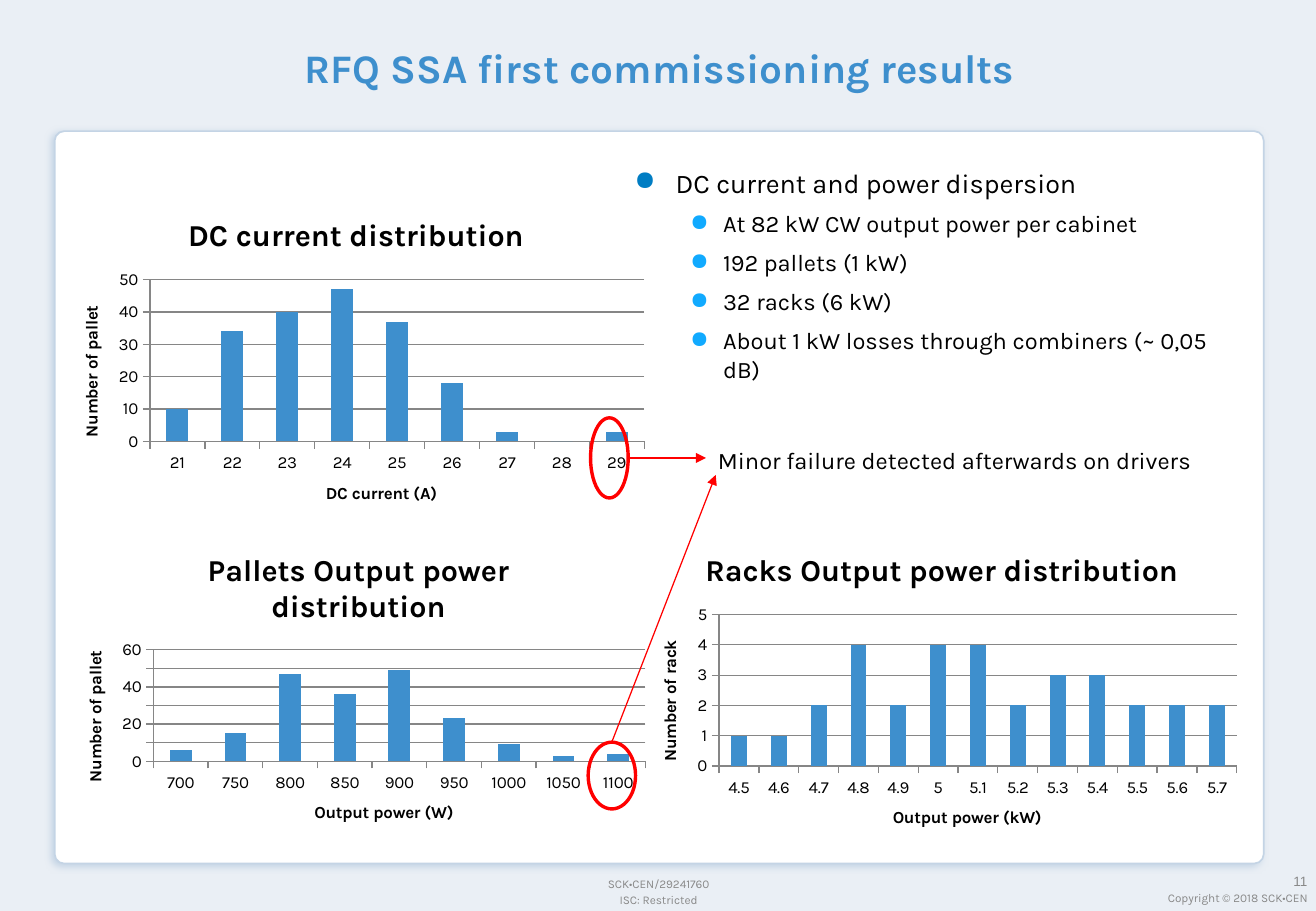
from lxml import etree
from pptx import Presentation
from pptx.chart import data as chart_data
from pptx.dml.color import RGBColor
from pptx.enum import chart as chart_enum, shapes, text
from pptx.oxml import ns
from pptx.util import Inches, Pt

BACKDROP = RGBColor(0xEA, 0xEF, 0xF5)
WHITE = RGBColor(0xFF, 0xFF, 0xFF)
BLACK = RGBColor(0x00, 0x00, 0x00)
BLUE = RGBColor(0x3E, 0x8F, 0xCD)
CARD_EDGE = RGBColor(0xC4, 0xD4, 0xE5)
GREY = RGBColor(0x89, 0x89, 0x89)
AXIS = RGBColor(0x86, 0x86, 0x86)
RED = RGBColor(0xFF, 0x00, 0x00)
TOPIC_DOT = RGBColor(0x00, 0x7D, 0xC3)
DETAIL_DOT = RGBColor(0x11, 0xAA, 0xFF)
FONT = "Karla"
LEFT, CENTER, RIGHT = text.PP_ALIGN.LEFT, text.PP_ALIGN.CENTER, text.PP_ALIGN.RIGHT


def sub(parent, tag, **attributes):
    return etree.SubElement(parent, ns.qn(tag), attributes)


def set_font(font, size, color=BLACK, bold=False, name=FONT):
    font.name, font.size, font.bold = name, Pt(size), bold
    font.color.rgb = color


def write(paragraph, words, size=14, color=BLACK, bold=False, name=FONT,
          align=LEFT, before=0, after=0):
    paragraph.alignment = align
    paragraph.space_before, paragraph.space_after = Pt(before), Pt(after)
    run = paragraph.add_run()
    run.text = words
    set_font(run.font, size, color, bold, name)


def set_frame(frame, margin_x, margin_y):
    frame.word_wrap = True
    frame.margin_left = frame.margin_right = Inches(margin_x)
    frame.margin_top = frame.margin_bottom = Inches(margin_y)
    return frame


def add_label(slide, box, words, margin_x=0.1, margin_y=0.05, **style):
    label = slide.shapes.add_textbox(*map(Inches, box))
    write(set_frame(label.text_frame, margin_x, margin_y).paragraphs[0], words, **style)
    return label


def set_bullet(paragraph, color, indent, hanging):
    properties = paragraph._p.get_or_add_pPr()
    properties.set("marL", str(Inches(indent)))
    properties.set("indent", str(-Inches(hanging)))
    sub(sub(properties, "a:buClr"), "a:srgbClr", val=str(color))
    sub(properties, "a:buChar", char="●")


def add_title(slide, box):
    title = slide.shapes.title
    title.left, title.top, title.width, title.height = map(Inches, box)
    frame = set_frame(title.text_frame, 0.12, 0.06)
    frame.vertical_anchor = text.MSO_ANCHOR.MIDDLE
    write(frame.paragraphs[0], "RFQ SSA first commissioning results",
          size=24, color=BLUE, bold=True, align=CENTER, after=6)


def add_card(slide, box):
    card = slide.shapes.add_shape(shapes.MSO_SHAPE.ROUNDED_RECTANGLE, *map(Inches, box))
    card.adjustments[0] = 0.013
    card.fill.solid()
    card.fill.fore_color.rgb = WHITE
    card.line.color.rgb = CARD_EDGE
    card.line.width = Pt(1)
    card.shadow.inherit = False
    effects = card._element.spPr.find(ns.qn("a:effectLst"))
    shadow = sub(effects, "a:outerShdw", blurRad=str(Pt(4)), dist=str(Pt(2)),
                 dir=str(135 * 60000), algn="tr", rotWithShape="0")
    sub(shadow, "a:srgbClr", val=str(CARD_EDGE))


def add_findings(slide, box):
    findings = slide.shapes.add_textbox(*map(Inches, box))
    frame = set_frame(findings.text_frame, 0.12, 0.06)
    topic = frame.paragraphs[0]
    set_bullet(topic, TOPIC_DOT, 0.34, 0.34)
    write(topic, "DC current and power dispersion", size=16, after=3.5)
    for words in ("At 82 kW CW output power per cabinet", "192 pallets (1 kW)",
                  "32 racks (6 kW)", "About 1 kW losses through combiners (~ 0,05 dB)"):
        detail = frame.add_paragraph()
        detail.level = 1
        set_bullet(detail, DETAIL_DOT, 0.73, 0.27)
        write(detail, words, before=2.8, after=3.5)


def style_axis(axis, title):
    axis.has_title = True
    write(axis.axis_title.text_frame.paragraphs[0], title, size=10, bold=True, align=CENTER)
    axis.major_tick_mark = chart_enum.XL_TICK_MARK.OUTSIDE
    axis.minor_tick_mark = chart_enum.XL_TICK_MARK.NONE
    axis.format.line.color.rgb = AXIS
    axis.format.line.width = Pt(0.75)
    set_font(axis.tick_labels.font, 10)


def add_histogram(slide, box, title, category_title, value_title, categories, counts, top, step):
    distribution = chart_data.CategoryChartData()
    distribution.categories = categories
    distribution.add_series("Series 1", counts)
    histogram = slide.shapes.add_chart(chart_enum.XL_CHART_TYPE.COLUMN_CLUSTERED,
                                       *map(Inches, box), distribution).chart
    set_font(histogram.font, 10)
    histogram.has_legend = False
    histogram.has_title = True
    histogram.chart_title.include_in_layout = False
    write(histogram.chart_title.text_frame.paragraphs[0], title,
          size=18, bold=True, align=CENTER)
    style_axis(histogram.category_axis, category_title)
    values = histogram.value_axis
    style_axis(values, value_title)
    values.minimum_scale, values.maximum_scale, values.major_unit = 0, top, step
    values.has_major_gridlines = True
    values.major_gridlines.format.line.color.rgb = AXIS
    values.major_gridlines.format.line.width = Pt(0.75)
    plot = histogram.plots[0]
    plot.gap_width = 150
    plot.vary_by_categories = False
    columns = plot.series[0]
    columns.format.fill.solid()
    columns.format.fill.fore_color.rgb = BLUE
    columns.invert_if_negative = False


def add_ring(slide, box):
    ring = slide.shapes.add_shape(shapes.MSO_SHAPE.OVAL, *map(Inches, box))
    ring.fill.background()
    ring.line.color.rgb = RED
    ring.line.width = Pt(2)
    ring.shadow.inherit = False
    return ring


def add_arrow(slide, start, end):
    arrow = slide.shapes.add_connector(shapes.MSO_CONNECTOR.STRAIGHT,
                                       *map(Inches, start + end))
    arrow.line.color.rgb = RED
    arrow.line.width = Pt(0.75)
    sub(arrow.line._get_or_add_ln(), "a:tailEnd", type="triangle")
    sub(arrow._element.spPr, "a:effectLst")
    return arrow


def add_failure_note(slide, box):
    left, top, width, height = box
    middle = top + height / 2
    add_ring(slide, (left - 0.95, middle - 0.33, 0.31, 0.66))
    power_ring = add_ring(slide, (left - 0.97, top + 2.49, 0.39, 0.55))
    note = add_label(slide, box, "Minor failure detected afterwards on drivers")
    current_arrow = add_arrow(slide, (left - 0.64, middle), (left, middle))
    current_arrow.end_connect(note, 1)
    power_arrow = add_arrow(slide, (left - 0.78, top + 2.49), (left + 0.08, top + 0.29))
    power_arrow.begin_connect(power_ring, 0)


def add_footer(slide, box):
    left, top, width, height = box
    center, right = left + width / 2, left + width
    for offset, words in ((0, "SCK•CEN/29241760"), (0.13, "ISC: Restricted")):
        add_label(slide, (center - 1.42, top + offset, 2.84, 0.22), words,
                  size=7, color=GREY, align=CENTER)
    for offset, words, size, name in ((0.02, "11", 8, "Arial"),
                                      (0.16, "Copyright © 2018 SCK•CEN", 7, FONT)):
        add_label(slide, (right - 1.48, top + offset, 1.48, 0.13), words, margin_x=0,
                  margin_y=0, size=size, name=name, color=GREY, align=RIGHT)


def main():
    deck = Presentation()
    deck.slide_width, deck.slide_height = Inches(10.83), Inches(7.5)
    slide = deck.slides.add_slide(deck.slide_layouts[5])
    slide.background.fill.solid()
    slide.background.fill.fore_color.rgb = BACKDROP
    add_footer(slide, (0.08, 7.17, 10.68, 0.3))
    add_card(slide, (0.45, 1.08, 9.95, 6.03))
    add_title(slide, (0.47, 0.05, 9.91, 1.01))
    add_findings(slide, (5.1, 1.31, 5.28, 1.81))
    add_histogram(slide, (0.46, 1.62, 4.94, 2.73), "DC current distribution",
                  "DC current (A)", "Number of pallet", [str(amps) for amps in range(21, 30)],
                  (10, 34, 40, 47, 37, 18, 3, 0, 3), 50, 10)
    add_histogram(slide, (5.22, 4.38, 5.06, 2.64), "Racks Output power distribution",
                  "Output power (kW)", "Number of rack",
                  [f"{tenths / 10:g}" for tenths in range(45, 58)],
                  (1, 1, 2, 4, 2, 4, 4, 2, 3, 3, 2, 2, 2), 5, 1)
    add_histogram(slide, (0.49, 4.38, 4.92, 2.6), "Pallets Output power distribution",
                  "Output power (W)", "Number of pallet",
                  [str(watts) for watts in range(700, 1101, 50)],
                  (6, 15, 47, 36, 49, 23, 9, 3, 4), 60, 10)
    add_failure_note(slide, (5.81, 3.62, 4.33, 0.3))
    deck.save("out.pptx")


if __name__ == "__main__":
    main()
